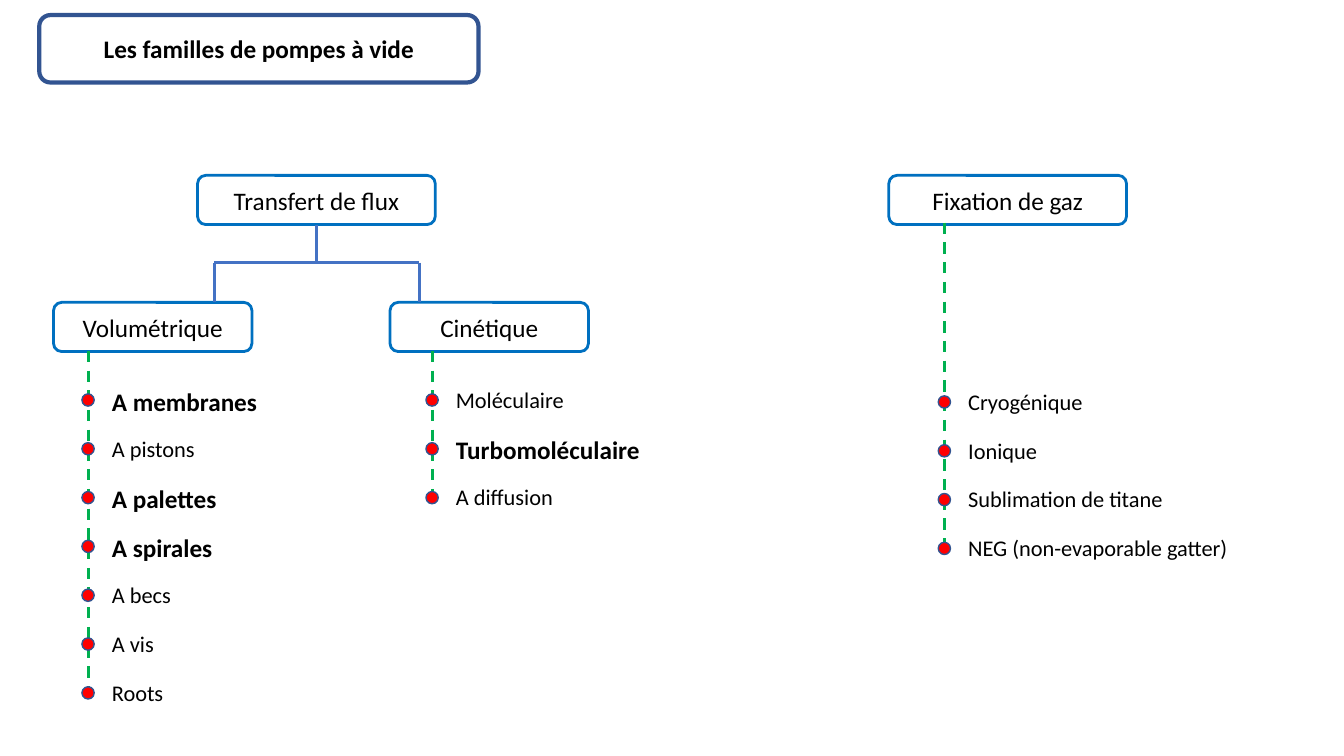
import pptx
import pptx.util
import pptx.dml.color
import pptx.enum.dml
import pptx.enum.shapes
import pptx.enum.text
import pptx.oxml.ns
import lxml.etree

Cm = pptx.util.Cm
Pt = pptx.util.Pt
SHAPES = pptx.enum.shapes.MSO_SHAPE

TITLE = ("Les familles de pompes à vide", 0.99, 0.38, 11.07, 1.7)
FAMILIES = [
    ("Transfert de flux", 4.98, 4.42, 5.99),
    ("Volumétrique", 1.35, 7.62, 5.0),
    ("Cinétique", 9.83, 7.62, 5.0),
    ("Fixation de gaz", 22.4, 4.42, 5.99),
]
FAMILY_HEIGHT = 1.24
FORK = {"left": 5.4, "right": 10.57, "top": 5.66, "middle": 6.62, "bottom": 7.62}

BRANCHES = [
    (2.22, 8.84, 10.08, [
        ("A membranes", True, 4.19),
        ("A pistons", False, 2.62),
        ("A palettes", True, 3.18),
        ("A spirales", True, 3.05),
        ("A becs", False, 2.01),
        ("A vis", False, 1.57),
        ("Roots", False, 1.83),
    ]),
    (10.89, 8.84, 10.08, [
        ("Moléculaire", False, 3.25),
        ("Turbomoléculaire", True, 5.18),
        ("A diffusion", False, 3.0),
    ]),
    (23.8, 5.61, 10.13, [
        ("Cryogénique", False, 3.43),
        ("Ionique", False, 2.26),
        ("Sublimation de titane", False, 5.61),
        ("NEG (non-evaporable gatter)", False, 7.16),
    ]),
]
ITEM_STEP = 1.23
DOT_SIZE = 0.31
LABEL_OFFSET_X = 0.35
LABEL_OFFSET_Y = -0.48
LINE_OVERHANG = 0.1


def color(value):
    return pptx.dml.color.RGBColor.from_string(value)


def write(shape, text, size, bold, alignment):
    text_frame = shape.text_frame
    text_frame.text = text
    paragraph = text_frame.paragraphs[0]
    paragraph.alignment = alignment
    font = paragraph.runs[0].font
    font.name = "Calibri"
    font.size = Pt(size)
    font.bold = bold
    font.color.rgb = color("000000")


def add_preset(slide, preset, left, top, width, height, line_color, line_width):
    shape = slide.shapes.add_shape(preset, Cm(left), Cm(top), Cm(width), Cm(height))
    shape.shadow.inherit = False
    shape.fill.background()
    shape.line.color.rgb = color(line_color)
    shape.line.width = Pt(line_width)
    return shape


def add_box(slide, text, left, top, width, height, line_color, line_width, bold):
    shape = add_preset(slide, SHAPES.ROUNDED_RECTANGLE, left, top, width, height,
                       line_color, line_width)
    shape.text_frame.vertical_anchor = pptx.enum.text.MSO_ANCHOR.MIDDLE
    write(shape, text, 18, bold, pptx.enum.text.PP_ALIGN.CENTER)


def add_line(slide, start_x, start_y, end_x, end_y, line_color):
    connector = slide.shapes.add_connector(
        pptx.enum.shapes.MSO_CONNECTOR.STRAIGHT,
        Cm(start_x), Cm(start_y), Cm(end_x), Cm(end_y))
    connector.line.color.rgb = color(line_color)
    connector.line.width = Pt(2)
    lxml.etree.SubElement(connector._element.spPr, pptx.oxml.ns.qn("a:effectLst"))
    return connector


def add_fork(slide):
    center = (FORK["left"] + FORK["right"]) / 2
    middle = FORK["middle"]
    for start_x, start_y, end_x, end_y in [
        (FORK["left"], middle, FORK["right"], middle),
        (center, FORK["top"], center, middle),
        (FORK["left"], middle, FORK["left"], FORK["bottom"]),
        (FORK["right"], middle, FORK["right"], FORK["bottom"]),
    ]:
        add_line(slide, start_x, start_y, end_x, end_y, "4472C4")


def add_label(slide, text, bold, left, top, width):
    height = 1.02 if bold else 0.94
    label = slide.shapes.add_textbox(Cm(left), Cm(top), Cm(width), Cm(height))
    label.text_frame.word_wrap = False
    label.text_frame.auto_size = pptx.enum.text.MSO_AUTO_SIZE.SHAPE_TO_FIT_TEXT
    write(label, text, 18 if bold else 16, bold, pptx.enum.text.PP_ALIGN.LEFT)


def add_branch(slide, axis, top, first_center, items):
    last_center = first_center + ITEM_STEP * (len(items) - 1)
    stem = add_line(slide, axis, top, axis, last_center + LINE_OVERHANG, "00B050")
    stem.line.dash_style = pptx.enum.dml.MSO_LINE.DASH
    for index, (text, bold, width) in enumerate(items):
        center = first_center + ITEM_STEP * index
        dot = add_preset(slide, SHAPES.OVAL, axis - DOT_SIZE / 2, center - DOT_SIZE / 2,
                         DOT_SIZE, DOT_SIZE, "325491", 1)
        dot.fill.solid()
        dot.fill.fore_color.rgb = color("FF0000")
        add_label(slide, text, bold, axis + LABEL_OFFSET_X, center + LABEL_OFFSET_Y, width)


def main():
    presentation = pptx.Presentation()
    presentation.slide_width = Cm(33.87)
    presentation.slide_height = Cm(19.05)
    slide = presentation.slides.add_slide(presentation.slide_layouts[6])
    add_box(slide, *TITLE, "325491", 3, True)
    for text, left, top, width in FAMILIES:
        add_box(slide, text, left, top, width, FAMILY_HEIGHT, "0070C0", 2, False)
    add_fork(slide)
    for branch in BRANCHES:
        add_branch(slide, *branch)
    presentation.save("out.pptx")


if __name__ == "__main__":
    main()
